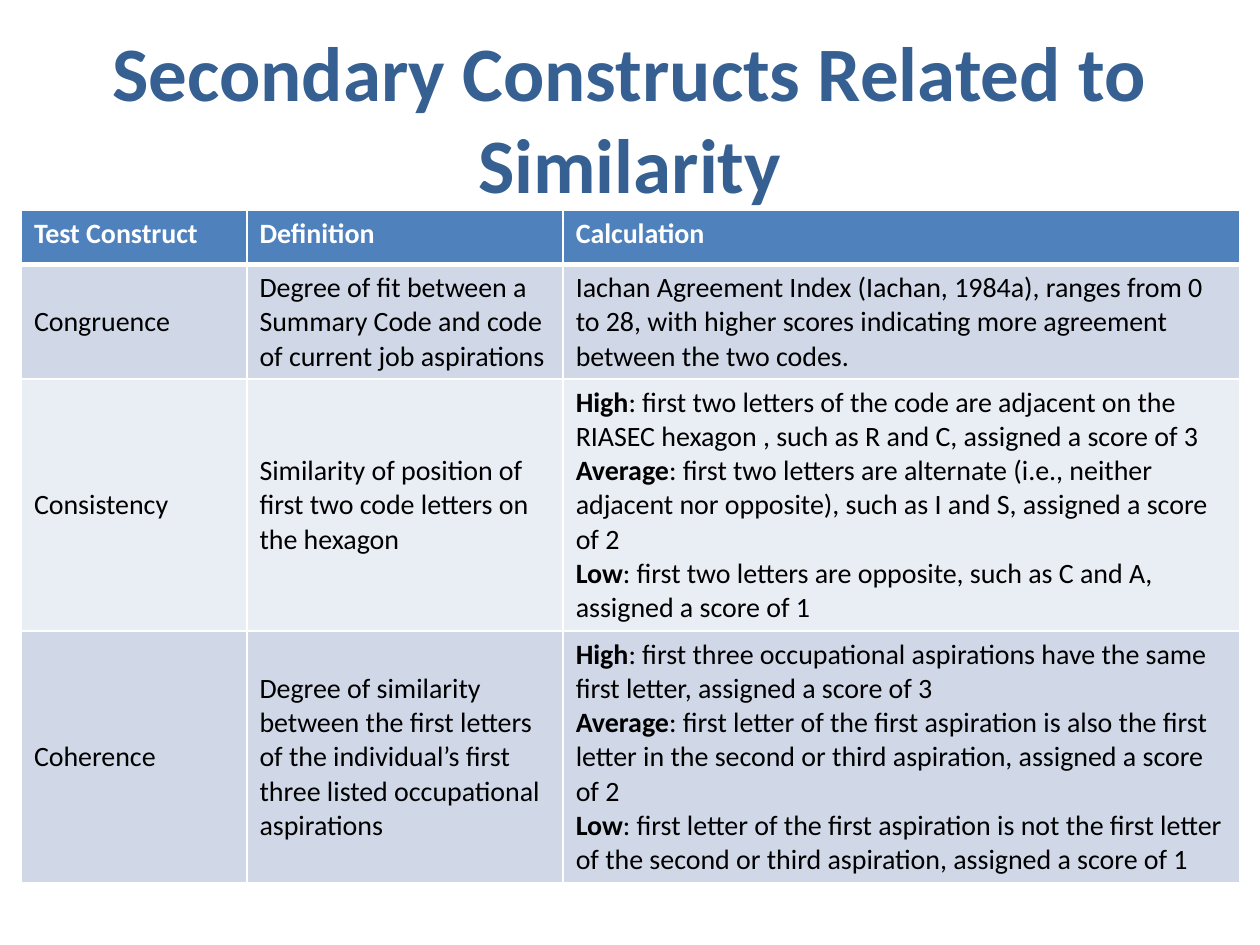
from lxml import etree
from pptx import Presentation
from pptx import util as u
from pptx.dml.color import RGBColor
from pptx.enum import text
from pptx.oxml import ns

FONT = "Calibri"
HEADINGS = ["Test Construct", "Definition", "Calculation"]
CONSTRUCTS = [
    ("Congruence",
     "Degree of fit between a Summary Code and code of current job aspirations",
     [("", "Iachan Agreement Index (Iachan, 1984a), ranges from 0 to 28, with higher "
           "scores indicating more agreement between the two codes.")]),
    ("Consistency",
     "Similarity of position of first two code letters on the hexagon",
     [("High", ": first two letters of the code are adjacent on the RIASEC hexagon , "
               "such as R and C, assigned a score of 3"),
      ("Average", ": first two letters are alternate (i.e., neither adjacent nor "
                  "opposite), such as I and S, assigned a score of 2"),
      ("Low", ": first two letters are opposite, such as C and A, assigned a score of 1")]),
    ("Coherence",
     "Degree of similarity between the first letters of the individual’s first three "
     "listed occupational aspirations",
     [("High", ": first three occupational aspirations have the same first letter, "
               "assigned a score of 3"),
      ("Average", ": first letter of the first aspiration is also the first letter in "
                  "the second or third aspiration, assigned a score of 2"),
      ("Low", ": first letter of the first aspiration is not the first letter of the "
              "second or third aspiration, assigned a score of 1")]),
]
COLUMN_WIDTHS = [1.79, 2.51, 5.37]
ROW_HEIGHTS = [0.43, 0.91, 2, 2]


def color(hex_value):
    """Turn a hex string into a colour."""
    return RGBColor.from_string(hex_value)


def add_run(paragraph, words, size, hex_value, bold=False):
    """Append one formatted run to a paragraph."""
    run = paragraph.add_run()
    run.text = words
    run.font.name = FONT
    run.font.size = u.Pt(size)
    run.font.bold = bold
    run.font.color.rgb = color(hex_value)


def set_borders(cell, top=1, bottom=1):
    """Draw white borders of the given point widths around a cell."""
    properties = cell._tc.get_or_add_tcPr()
    for side, width in (("L", 1), ("R", 1), ("T", top), ("B", bottom)):
        line = etree.SubElement(properties, ns.qn(f"a:ln{side}"), w=str(u.Pt(width)))
        fill = etree.SubElement(line, ns.qn("a:solidFill"))
        etree.SubElement(fill, ns.qn("a:srgbClr"), val="FFFFFF")


def fill_cell(cell, lines, fill, ink, heading=False, middle=False, top=1):
    """Style a cell and write its lines of bold label and plain words."""
    set_borders(cell, top, 3 if heading else 1)
    cell.fill.solid()
    cell.fill.fore_color.rgb = color(fill)
    cell.vertical_anchor = text.MSO_ANCHOR.MIDDLE if middle else text.MSO_ANCHOR.TOP
    frame = cell.text_frame
    for index, (label, words) in enumerate(lines):
        paragraph = frame.add_paragraph() if index else frame.paragraphs[0]
        if label:
            add_run(paragraph, label, 16, ink, bold=True)
        add_run(paragraph, words, 16, ink, bold=heading)


def add_title(slide, left, top, width, height):
    """Place the centred slide title in its box."""
    frame = slide.shapes.add_textbox(left, top, width, height).text_frame
    frame.word_wrap = True
    frame.vertical_anchor = text.MSO_ANCHOR.MIDDLE
    paragraph = frame.paragraphs[0]
    paragraph.alignment = text.PP_ALIGN.CENTER
    add_run(paragraph, "Secondary Constructs Related to Similarity", 44, "376092", bold=True)


def add_construct_table(slide, left, top, width, height):
    """Place the table of constructs in its box."""
    table = slide.shapes.add_table(
        len(ROW_HEIGHTS), len(COLUMN_WIDTHS), left, top, width, height).table
    for column, column_width in zip(table.columns, COLUMN_WIDTHS):
        column.width = u.Inches(column_width)
    for row, row_height in zip(table.rows, ROW_HEIGHTS):
        row.height = u.Inches(row_height)
    for column, heading in enumerate(HEADINGS):
        fill_cell(table.cell(0, column), [("", heading)], "4F81BD", "FFFFFF", heading=True)
    for row, (construct, definition, calculation) in enumerate(CONSTRUCTS, 1):
        band = "D0D8E8" if row % 2 else "E9EDF4"
        contents = [[("", construct)], [("", definition)], calculation]
        for column, lines in enumerate(contents):
            fill_cell(table.cell(row, column), lines, band, "000000",
                      middle=column < 2, top=3 if row == 1 else 1)


def main():
    """Build and save the slide."""
    deck = Presentation()
    deck.slide_width, deck.slide_height = u.Inches(10), u.Inches(7.5)
    slide = deck.slides.add_slide(deck.slide_layouts[6])
    add_title(slide, u.Inches(0.5), u.Inches(0.3), u.Inches(9), u.Inches(1.25))
    add_construct_table(slide, u.Inches(0.17), u.Inches(1.67),
                        u.Inches(sum(COLUMN_WIDTHS)), u.Inches(sum(ROW_HEIGHTS)))
    deck.save("out.pptx")


if __name__ == "__main__":
    main()
